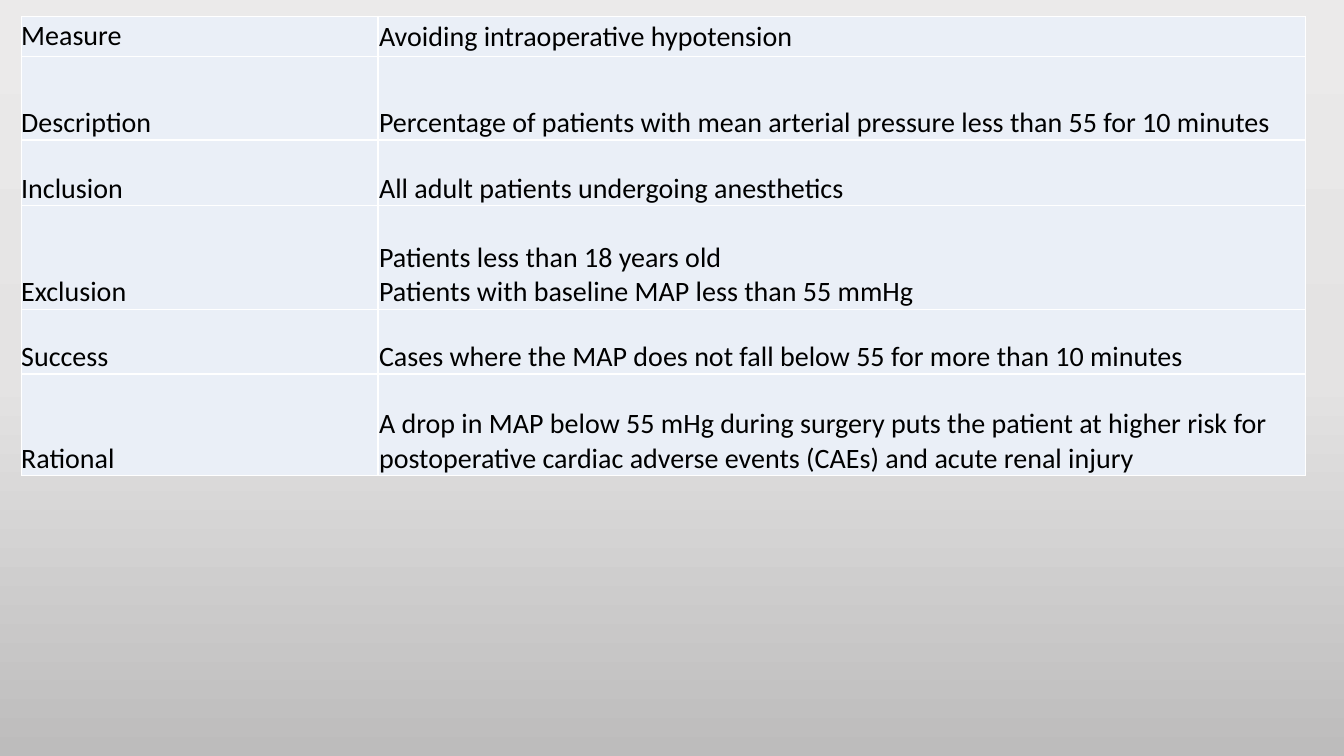
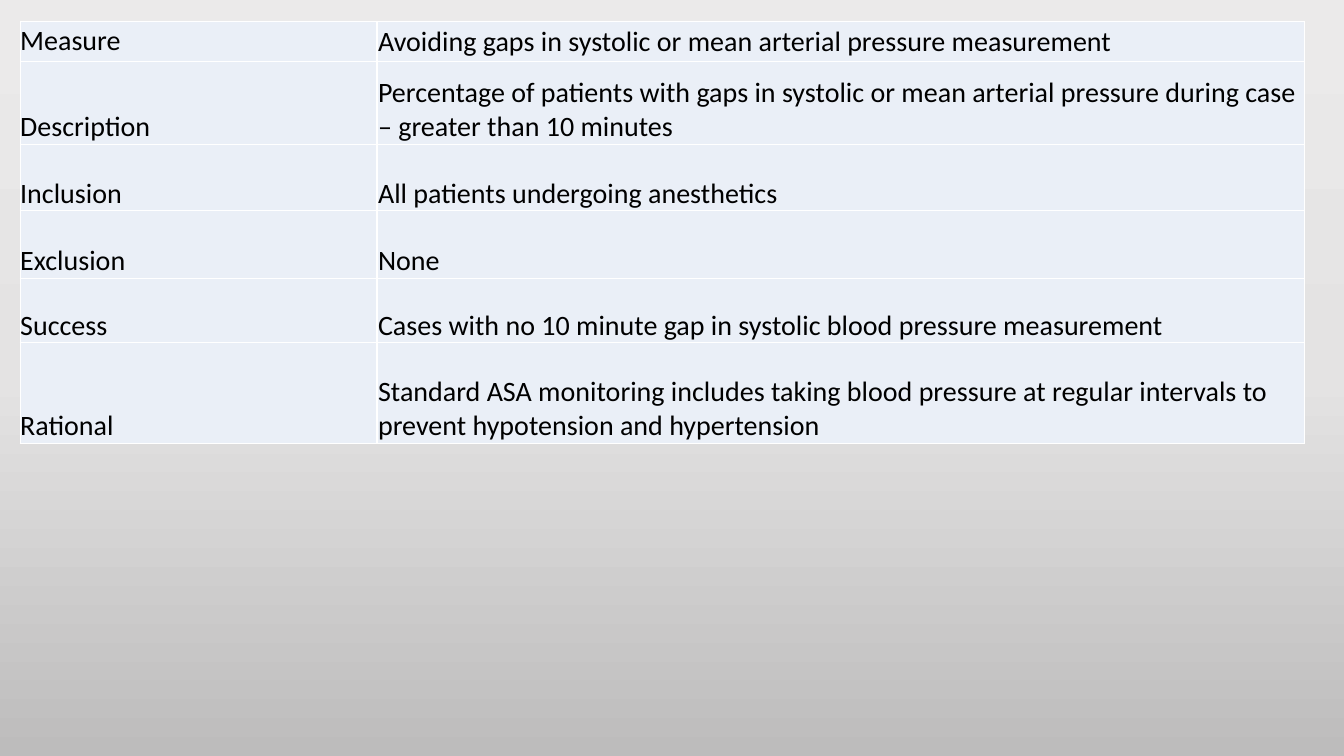
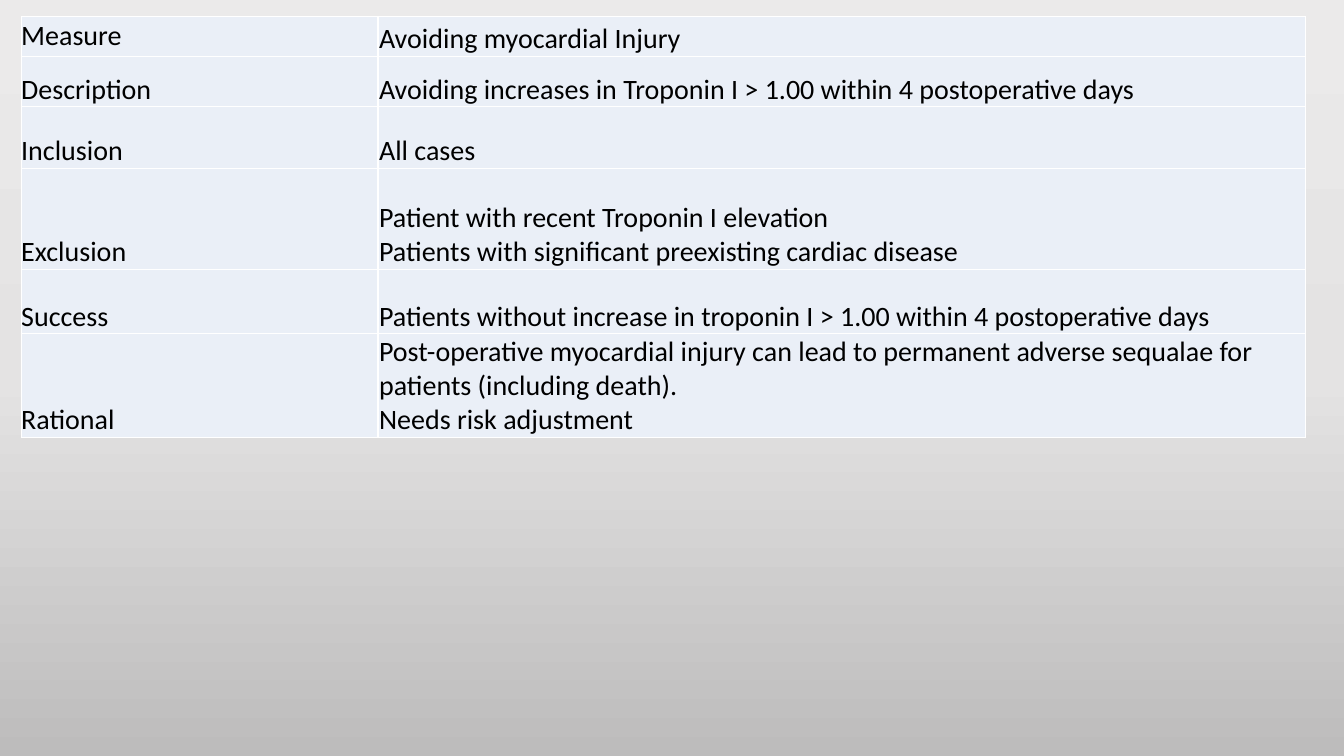
"""Builds three slides, each a table defining one anesthesia quality measure."""
from copy import deepcopy

from pptx import Presentation
from pptx import util as u
from pptx.dml.color import RGBColor
from pptx.enum import text
from pptx.oxml import parse_xml
from pptx.oxml.ns import nsdecls, qn

THEME = {
    "font": "Calibri",
    "size": 20,
    "ink": "000000",
    "cell": "EAEFF7",
    "border": "FFFFFF",
    "border_pt": 1,
    "backdrop": [(0, "EBEAEA"), (0.5, "E4E3E3"), (1, "BDBCBC")],
}
SLIDE = (13.33, 7.5)
COLUMNS = (3.54, 9.2)
INSETS = (0, 0.01)
MIDDLE, BOTTOM = text.MSO_ANCHOR.MIDDLE, text.MSO_ANCHOR.BOTTOM
LABELS = ("Measure", "Description", "Inclusion", "Exclusion", "Success", "Rational")

MEASURES = [
    {
        "at": (0.21, 0.16),
        "heading_anchor": MIDDLE,
        "rows": (0.4, 0.83, 0.65, 1.03, 0.64, 1.01),
        "values": (
            "Avoiding intraoperative hypotension",
            "Percentage of patients with mean arterial pressure less than 55 for 10 minutes",
            "All adult patients undergoing anesthetics",
            "Patients less than 18 years old\vPatients with baseline MAP less than 55 mmHg",
            "Cases where the MAP does not fall below 55 for more than 10 minutes",
            "A drop in MAP below 55 mHg during surgery puts the patient at higher risk for "
            "postoperative cardiac adverse events (CAEs) and acute renal injury",
        ),
    },
    {
        "at": (0.2, 0.21),
        "heading_anchor": MIDDLE,
        "rows": (0.4, 0.82, 0.66, 0.67, 0.64, 1),
        "values": (
            "Avoiding gaps in systolic or mean arterial pressure measurement",
            "Percentage of patients with gaps in systolic or mean arterial pressure during case "
            "– greater than 10 minutes",
            "All patients undergoing anesthetics",
            "None",
            "Cases with no 10 minute gap in systolic blood pressure measurement",
            "Standard ASA monitoring includes taking blood pressure at regular intervals to "
            "prevent hypotension and hypertension",
        ),
    },
    {
        "at": (0.21, 0.16),
        "heading_anchor": BOTTOM,
        "rows": (0.4, 0.5, 0.61, 1, 0.64, 0.98),
        "values": (
            "Avoiding myocardial Injury",
            "Avoiding increases in Troponin I > 1.00 within 4 postoperative days",
            "All cases",
            "Patient with recent Troponin I elevation\v"
            "Patients with significant preexisting cardiac disease",
            "Patients without increase in troponin I > 1.00 within 4 postoperative days",
            "Post-operative myocardial injury can lead to permanent adverse sequalae for "
            "patients (including death).\nNeeds risk adjustment",
        ),
    },
]


def rgb(name):
    return RGBColor.from_string(THEME[name])


def paint_backdrop(master):
    fill = master.background.fill
    fill.gradient()
    fill.gradient_angle = 270
    stops = master.element.find(".//" + qn("a:gsLst"))
    stops.append(deepcopy(stops[-1]))
    for stop, (position, color) in zip(fill.gradient_stops, THEME["backdrop"]):
        stop.position = position
        stop.color.rgb = RGBColor.from_string(color)


def add_borders(cell):
    tc_pr = cell._tc.get_or_add_tcPr()
    for side in ("lnL", "lnR", "lnT", "lnB"):
        tc_pr.append(parse_xml(
            f'<a:{side} {nsdecls("a")} w="{u.Pt(THEME["border_pt"])}"><a:solidFill>'
            f'<a:srgbClr val="{THEME["border"]}"/></a:solidFill></a:{side}>'))


def fill_cell(cell, content, inset, anchor):
    add_borders(cell)
    cell.fill.solid()
    cell.fill.fore_color.rgb = rgb("cell")
    cell.margin_left = cell.margin_right = cell.margin_top = u.Inches(inset)
    cell.margin_bottom = 0
    cell.vertical_anchor = anchor
    tf = cell.text_frame
    tf.text = content
    for p in tf.paragraphs:
        p.font.name = THEME["font"]
        p.font.size = u.Pt(THEME["size"])
        p.font.color.rgb = rgb("ink")


def add_measure(s, measure):
    heights = measure["rows"]
    box = (*measure["at"], sum(COLUMNS), sum(heights))
    table = s.shapes.add_table(len(heights), len(COLUMNS), *map(u.Inches, box)).table
    table.first_row = table.horz_banding = False
    for column, width in zip(table.columns, COLUMNS):
        column.width = u.Inches(width)
    for i, pair in enumerate(zip(LABELS, measure["values"])):
        table.rows[i].height = u.Inches(heights[i])
        anchors = (BOTTOM, BOTTOM) if i else (MIDDLE, measure["heading_anchor"])
        for cell, *parts in zip(table.rows[i].cells, pair, INSETS, anchors):
            fill_cell(cell, *parts)


def main():
    prs = Presentation()
    prs.slide_width, prs.slide_height = map(u.Inches, SLIDE)
    paint_backdrop(prs.slide_master)
    for measure in MEASURES:
        add_measure(prs.slides.add_slide(prs.slide_layouts[6]), measure)
    prs.save("out.pptx")


if __name__ == "__main__":
    main()
